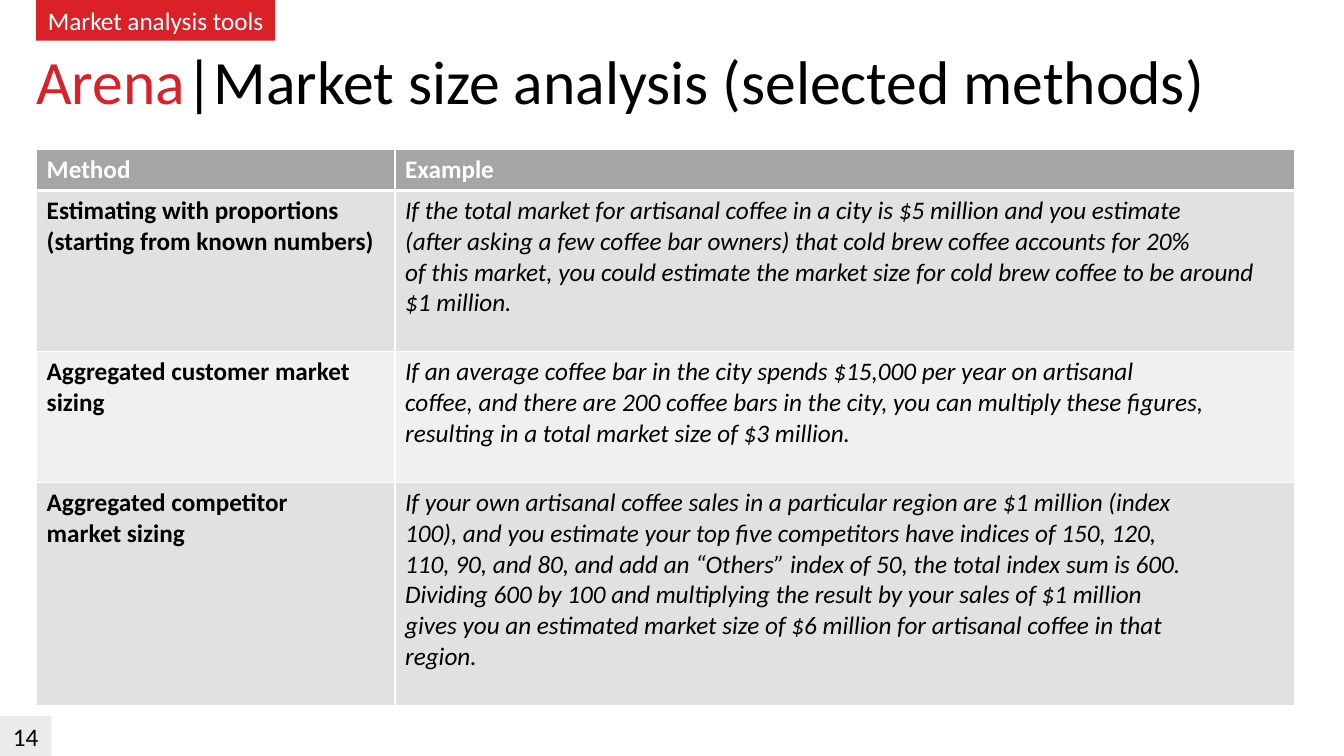
from lxml.etree import SubElement
from pptx import Presentation
from pptx.dml.color import RGBColor
from pptx.enum.shapes import MSO_SHAPE as SHAPE
from pptx.enum.text import MSO_ANCHOR as ANCHOR, MSO_AUTO_SIZE as AUTOSIZE, PP_ALIGN as ALIGN
from pptx.oxml import parse_xml
from pptx.oxml.ns import nsdecls, qn
from pptx.util import Pt

COLORS = {"red": "DA2128", "black": "000000", "white": "FFFFFF", "header": "A5A5A5",
          "dark": "E1E1E1", "light": "F0F0F0", "page": "BFBFBF"}
HEADER = {"size": Pt(18), "name": "Calibri", "bold": True}
METHOD = {"size": Pt(18), "name": "Calibri", "bold": True, "italic": False}
EXAMPLE = {"size": Pt(18), "name": "Calibri", "bold": False, "italic": True}
LABEL = {"size": Pt(18), "name": "Calibri"}
TITLE = {"size": Pt(44), "name": "Calibri"}

METHODS = [
    (["Estimating with proportions (starting from known numbers)"],
     ["If the total market for artisanal coffee in a city is $5 million and you estimate",
      "(after asking a few coffee bar owners) that cold brew coffee accounts for 20%",
      "of this market, you could estimate the market size for cold brew coffee to be around "
      "$1 million."]),
    (["Aggregated customer market sizing"],
     ["If an average coffee bar in the city spends $15,000 per year on artisanal",
      "coffee, and there are 200 coffee bars in the city, you can multiply these figures,",
      "resulting in a total market size of $3 million."]),
    (["Aggregated competitor", "market sizing"],
     ["If your own artisanal coffee sales in a particular region are $1 million (index",
      "100), and you estimate your top five competitors have indices of 150, 120,",
      "110, 90, and 80, and add an “Others” index of 50, the total index sum is 600.",
      "Dividing 600 by 100 and multiplying the result by your sales of $1 million",
      "gives you an estimated market size of $6 million for artisanal coffee in that",
      "region."]),
]


def rgb(color):
    """Return the named colour."""
    return RGBColor.from_string(COLORS[color])


def add_run(p, text, fmt, color):
    """Add a formatted run to a paragraph."""
    r = p.add_run()
    r.text = text
    for key, value in fmt.items():
        setattr(r.font, key, value)
    r.font.color.rgb = rgb(color)


def add_title(s, box, parts):
    """Place the title placeholder and write its coloured parts."""
    sp = s.shapes.title
    sp.left, sp.top, sp.width, sp.height = map(Pt, box)
    tf = sp.text_frame
    tf.auto_size, tf.word_wrap, tf.vertical_anchor = AUTOSIZE.NONE, True, ANCHOR.MIDDLE
    p = tf.paragraphs[0]
    p.alignment, p.line_spacing = ALIGN.LEFT, 0.9
    for text, color in parts:
        add_run(p, text, TITLE, color)


def add_label(s, box, text, fill, color, anchor, alpha=100):
    """Draw a filled rectangle with one centred line of text."""
    sp = s.shapes.add_shape(SHAPE.RECTANGLE, *map(Pt, box))
    sp.shadow.inherit = False
    sp.line.fill.background()
    sp.fill.solid()
    sp.fill.fore_color.rgb = rgb(fill)
    if alpha < 100:
        clr = sp.fill._xPr.find(".//" + qn("a:srgbClr"))
        SubElement(clr, qn("a:alpha"), val=str(alpha * 1000))
    tf = sp.text_frame
    tf.word_wrap, tf.vertical_anchor = True, anchor
    p = tf.paragraphs[0]
    p.alignment = ALIGN.CENTER
    add_run(p, text, LABEL, color)


def set_borders(cell, widths):
    """Give a cell white borders of the given widths."""
    tcPr = cell._tc.get_or_add_tcPr()
    for i, side in enumerate(("L", "R", "T", "B")):
        tcPr.insert(i, parse_xml(
            f'<a:ln{side} {nsdecls("a")} w="{Pt(widths.get(side, 1))}"><a:solidFill>'
            f'<a:srgbClr val="{COLORS["white"]}"/></a:solidFill></a:ln{side}>'))


def fill_cell(cell, lines, fmt, color, fill, widths):
    """Write the lines of a cell and set its fill and borders."""
    cell.fill.solid()
    cell.fill.fore_color.rgb = rgb(fill)
    set_borders(cell, widths)
    tf = cell.text_frame
    for i, line in enumerate(lines):
        p = tf.add_paragraph() if i else tf.paragraphs[0]
        add_run(p, line, fmt, color)


def add_methods(s, box, split, heights):
    """Build the table of methods and examples."""
    tbl = s.shapes.add_table(len(METHODS) + 1, 2, *map(Pt, box)).table
    for col, width in zip(tbl.columns, (split, box[2] - split)):
        col.width = Pt(width)
    for row, height in zip(tbl.rows, heights):
        row.height = Pt(height)
    for c, head in enumerate(("Method", "Example")):
        fill_cell(tbl.cell(0, c), [head], HEADER, "white", "header", {"B": 3})
    for i, texts in enumerate(METHODS, 1):
        fill = "dark" if i % 2 else "light"
        widths = {"T": 3} if i == 1 else {}
        for c, (lines, fmt) in enumerate(zip(texts, (METHOD, EXAMPLE))):
            fill_cell(tbl.cell(i, c), lines, fmt, "black", fill, widths)


def main():
    """Build and save the slide."""
    prs = Presentation()
    prs.slide_width, prs.slide_height = Pt(960), Pt(540)
    s = prs.slides.add_slide(prs.slide_layouts[5])
    add_title(s, (18.7, 7.9, 923.8, 104.4),
              [("Arena", "red"), ("|Market size analysis (selected methods)", "black")])
    add_label(s, (0, 511.6, 36.7, 29), "14", "page", "black", ANCHOR.TOP, alpha=30)
    add_methods(s, (26.2, 106.9, 898.2, 396.7), 256, (29, 115, 93.6, 159))
    add_label(s, (25.9, 0, 170.6, 29), "Market analysis tools", "red", "white", ANCHOR.MIDDLE)
    prs.save("out.pptx")


if __name__ == "__main__":
    main()
